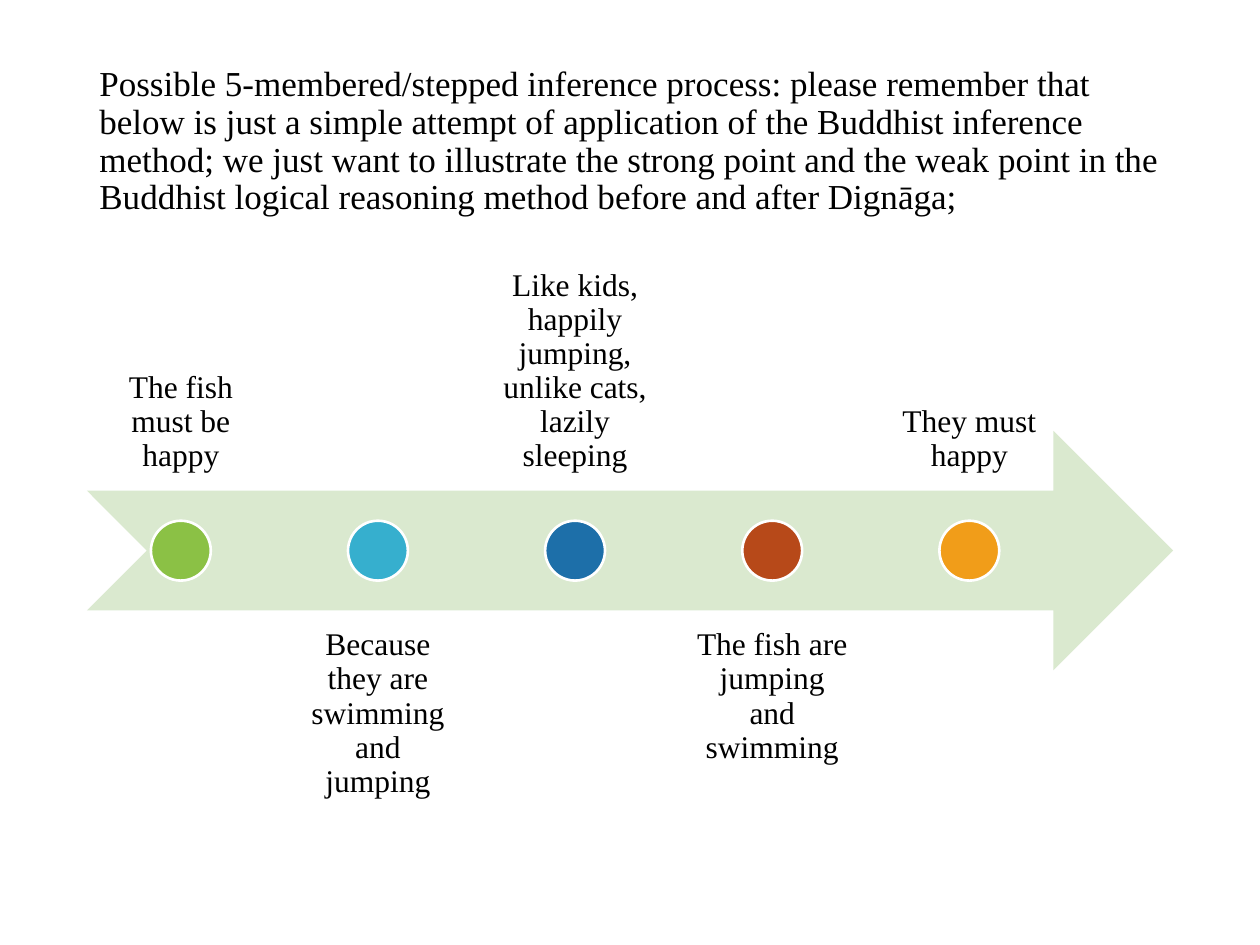
import dataclasses

import pptx
import pptx.dml.color
import pptx.enum.shapes
import pptx.enum.text
import pptx.util

RGB = pptx.dml.color.RGBColor
SHAPE = pptx.enum.shapes.MSO_SHAPE
ALIGN = pptx.enum.text.PP_ALIGN
ANCHOR = pptx.enum.text.MSO_ANCHOR
Inches = pptx.util.Inches

BLACK = RGB(0x00, 0x00, 0x00)
WHITE = RGB(0xFF, 0xFF, 0xFF)
PALE = RGB(0xDA, 0xE9, 0xCF)
GREEN = RGB(0x8B, 0xC1, 0x45)
CYAN = RGB(0x36, 0xAF, 0xCE)
BLUE = RGB(0x1D, 0x6F, 0xA9)
RUST = RGB(0xB7, 0x49, 0x19)
AMBER = RGB(0xF1, 0x9D, 0x19)

WIDE, HIGH = 10, 7.5
LEFT = 0.69
SPAN = WIDE - 2 * LEFT
BAND = 1.9                  # height of the arrow and of each label row
TOP = 2.0                   # top of the upper label row
MID = TOP + 1.5 * BAND / 2 * 2 - 0.48  # centre line of the arrow
COL = 1.49                  # width of a label column
GAP = 0.05 * COL
DOT = BAND / 4

TITLE = (
    "Possible 5-membered/stepped inference process: please remember that "
    "below is just a simple attempt of application of the Buddhist inference "
    "method; we just want to illustrate the strong point and the weak point "
    "in the Buddhist logical reasoning method before and after Dignāga;"
)


@dataclasses.dataclass
class Step:
    text: str
    color: RGB


STEPS = [
    Step("The fish must be happy", GREEN),
    Step("Because they are swimming and jumping", CYAN),
    Step("Like kids, happily jumping, unlike cats, lazily sleeping", BLUE),
    Step("The fish are jumping and swimming", RUST),
    Step("They must happy", AMBER),
]


@dataclasses.dataclass
class Box:
    left: float
    top: float
    width: float
    height: float

    def place(self) -> list:
        return [Inches(n) for n in dataclasses.astuple(self)]


def add_text(slide, box: Box, text: str, *, size: int, align=ALIGN.LEFT,
             anchor=ANCHOR.MIDDLE, side=0.1, edge=0.05) -> None:
    """Add wrapped text; side and edge are the insets across and down."""
    frame = slide.shapes.add_textbox(*box.place()).text_frame
    frame.word_wrap = True
    frame.auto_size = pptx.enum.text.MSO_AUTO_SIZE.NONE
    frame.vertical_anchor = anchor
    frame.margin_left = frame.margin_right = Inches(side)
    frame.margin_top = frame.margin_bottom = Inches(edge)
    para = frame.paragraphs[0]
    para.alignment = align
    para.line_spacing = 0.9
    run = para.add_run()
    run.text = text
    run.font.size = pptx.util.Pt(size)
    run.font.name = "Times New Roman"
    run.font.color.rgb = BLACK


def add_form(slide, kind: SHAPE, box: Box, fill: RGB, line: RGB | None = None) -> None:
    form = slide.shapes.add_shape(kind, *box.place())
    form.shadow.inherit = False
    form.fill.solid()
    form.fill.fore_color.rgb = fill
    if line is None:
        form.line.fill.background()
    else:
        form.line.color.rgb = line
        form.line.width = pptx.util.Pt(1.5)


def add_step(slide, index: int, step: Step) -> None:
    """Draw a dot on the arrow, with its label above or below by turns."""
    left = LEFT + index * (COL + GAP)
    below = index % 2
    top = TOP + below * 1.5 * BAND
    add_text(slide, Box(left, top, COL, BAND), step.text, size=18,
             align=ALIGN.CENTER, anchor=ANCHOR.TOP if below else ANCHOR.BOTTOM,
             side=0.14, edge=0.14)
    dot = Box(left + (COL - DOT) / 2, MID - DOT / 2, DOT, DOT)
    add_form(slide, SHAPE.OVAL, dot, step.color, WHITE)


def main() -> None:
    deck = pptx.Presentation()
    deck.slide_width, deck.slide_height = Inches(WIDE), Inches(HIGH)
    slide = deck.slides.add_slide(deck.slide_layouts[6])
    add_text(slide, Box(LEFT, 0.4, SPAN, 1.45), TITLE, size=20)
    arrow = Box(LEFT, MID - BAND / 2, SPAN, BAND)
    add_form(slide, SHAPE.NOTCHED_RIGHT_ARROW, arrow, PALE)
    for index, step in enumerate(STEPS):
        add_step(slide, index, step)
    deck.save("out.pptx")


if __name__ == "__main__":
    main()
